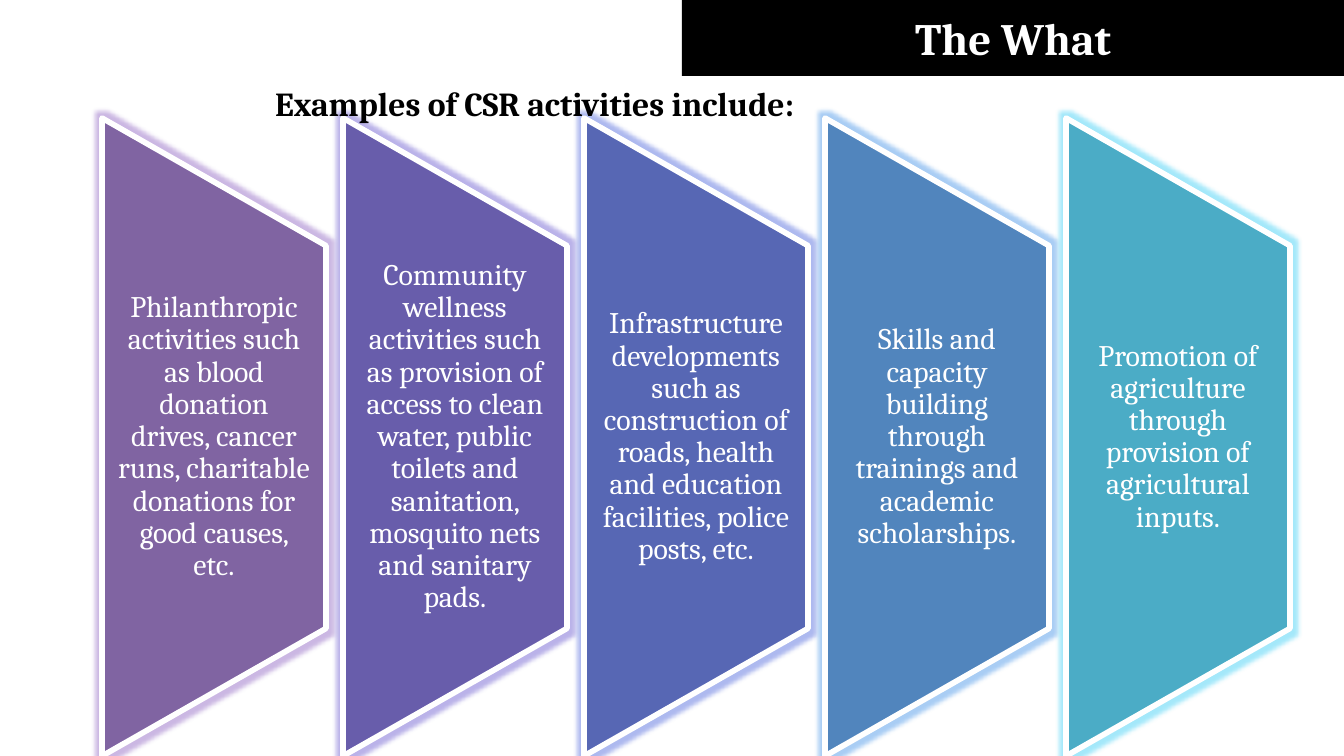
from lxml.etree import SubElement
from pptx import Presentation
from pptx.dml.color import RGBColor
from pptx.enum.shapes import MSO_SHAPE
from pptx.enum.text import MSO_ANCHOR, MSO_AUTO_SIZE, PP_ALIGN
from pptx.oxml.ns import qn
from pptx.util import Pt

TITLE = "The What"
HEADING = "Examples of CSR activities include:"
ACTIVITIES = [
    ("Philanthropic activities such as blood donation drives, cancer runs, "
     "charitable donations for good causes, etc.", RGBColor(0x80, 0x64, 0xA2)),
    ("Community wellness activities such as provision of access to clean water, "
     "public toilets and sanitation, mosquito nets and sanitary pads.",
     RGBColor(0x68, 0x5D, 0xAB)),
    ("Infrastructure developments such as construction of roads, health and "
     "education facilities, police posts, etc.", RGBColor(0x57, 0x67, 0xB4)),
    ("Skills and capacity building through trainings and academic scholarships.",
     RGBColor(0x51, 0x85, 0xBD)),
    ("Promotion of agriculture through provision of agricultural inputs.",
     RGBColor(0x4B, 0xAC, 0xC6)),
]

BLACK = RGBColor(0, 0, 0)
WHITE = RGBColor(0xFF, 0xFF, 0xFF)
FONT = "Cambria"
EMU_PER_PX = 914400 / 134.4
SLIDE_WIDTH, SLIDE_HEIGHT = 1344, 756
PANEL_LEFT, PANEL_PITCH = 102, 241
PANEL_WIDTH, PANEL_LENGTH, PANEL_MIDDLE = 224, 638, 437
TEXT_HEIGHT = 383


def px(*values):
    return [round(value * EMU_PER_PX) for value in values]


def style_text(paragraph, text, size, color, bold=False, alignment=PP_ALIGN.CENTER):
    paragraph.text = text
    paragraph.alignment = alignment
    font = paragraph.font
    font.name, font.size, font.bold = FONT, Pt(size), bold
    font.color.rgb = color


def add_glow(shape, color):
    effects = shape._element.spPr.find(qn("a:effectLst"))
    glow = SubElement(effects, qn("a:glow"), rad=str(Pt(5)))
    glow_color = SubElement(glow, qn("a:srgbClr"), val=str(color))
    SubElement(glow_color, qn("a:satMod"), val="175000")
    SubElement(glow_color, qn("a:alpha"), val="40000")


def add_panel(slide, index, text, color):
    left = PANEL_LEFT + index * PANEL_PITCH
    panel = slide.shapes.add_shape(
        MSO_SHAPE.FLOWCHART_MANUAL_OPERATION,
        *px(left + (PANEL_WIDTH - PANEL_LENGTH) / 2, PANEL_MIDDLE - PANEL_WIDTH / 2,
            PANEL_LENGTH, PANEL_WIDTH))
    panel.rotation = 270
    panel.fill.solid()
    panel.fill.fore_color.rgb = color
    panel.line.color.rgb = WHITE
    panel.line.width = Pt(3)
    panel.shadow.inherit = False
    add_glow(panel, color)

    box = slide.shapes.add_textbox(
        *px(left, PANEL_MIDDLE - TEXT_HEIGHT / 2, PANEL_WIDTH, TEXT_HEIGHT))
    frame = box.text_frame
    frame.word_wrap = True
    frame.vertical_anchor = MSO_ANCHOR.MIDDLE
    frame.margin_left = frame.margin_right = Pt(8)
    frame.margin_top = frame.margin_bottom = 0
    paragraph = frame.paragraphs[0]
    style_text(paragraph, text, 16, WHITE)
    paragraph.line_spacing = 0.9
    paragraph.space_after = Pt(5.6)


def main():
    """Build the slide of CSR activity examples."""
    presentation = Presentation()
    presentation.slide_width, presentation.slide_height = px(SLIDE_WIDTH, SLIDE_HEIGHT)
    slide = presentation.slides.add_slide(presentation.slide_layouts[5])

    title = slide.shapes.title
    title.left, title.top, title.width, title.height = px(682, 0, 662, 76)
    title.fill.solid()
    title.fill.fore_color.rgb = BLACK
    title.text_frame.auto_size = MSO_AUTO_SIZE.NONE
    title.text_frame.vertical_anchor = MSO_ANCHOR.MIDDLE
    style_text(title.text_frame.paragraphs[0], TITLE, 24, WHITE, bold=True)

    for index, (text, color) in enumerate(ACTIVITIES):
        add_panel(slide, index, text, color)

    heading = slide.shapes.add_textbox(*px(262, 76, 571, 54))
    heading.text_frame.word_wrap = False
    heading.text_frame.auto_size = MSO_AUTO_SIZE.SHAPE_TO_FIT_TEXT
    paragraph = heading.text_frame.paragraphs[0]
    style_text(paragraph, HEADING, 18, BLACK, bold=True, alignment=PP_ALIGN.LEFT)
    paragraph.space_after = Pt(6)

    presentation.save("out.pptx")


if __name__ == "__main__":
    main()
